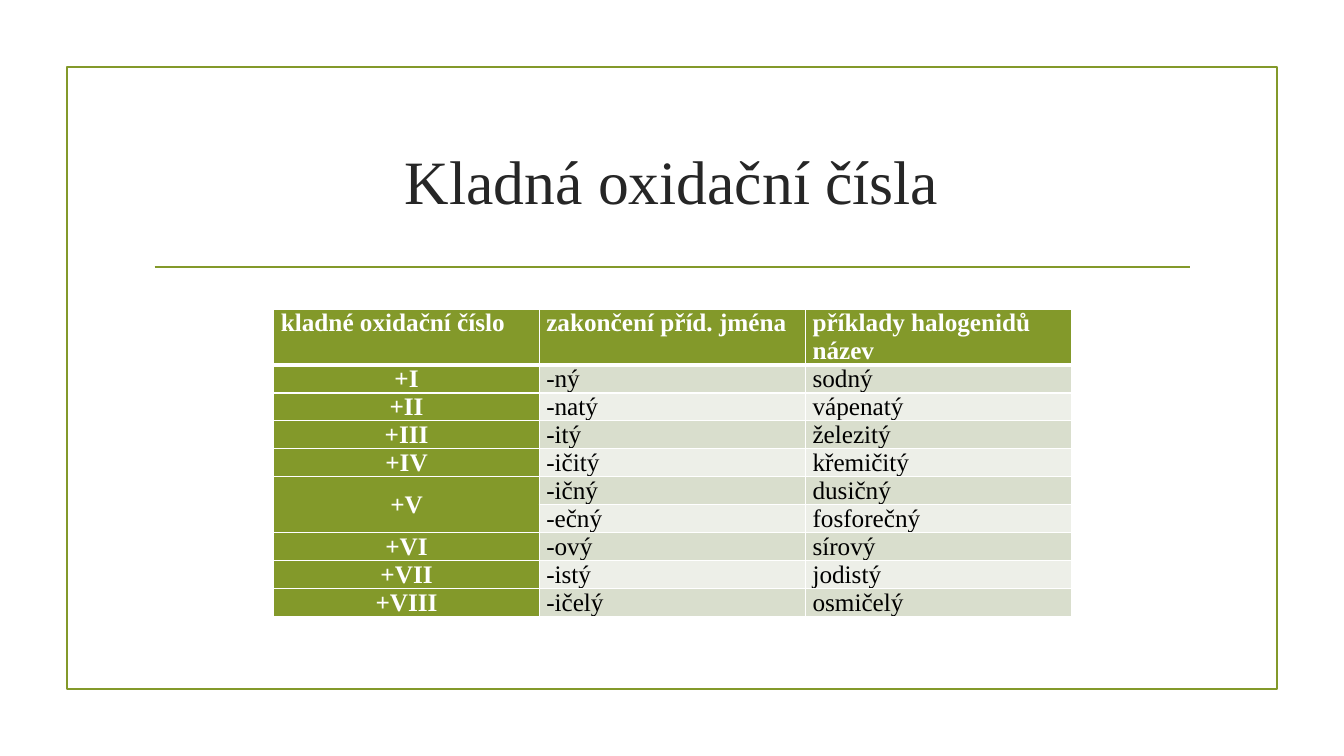
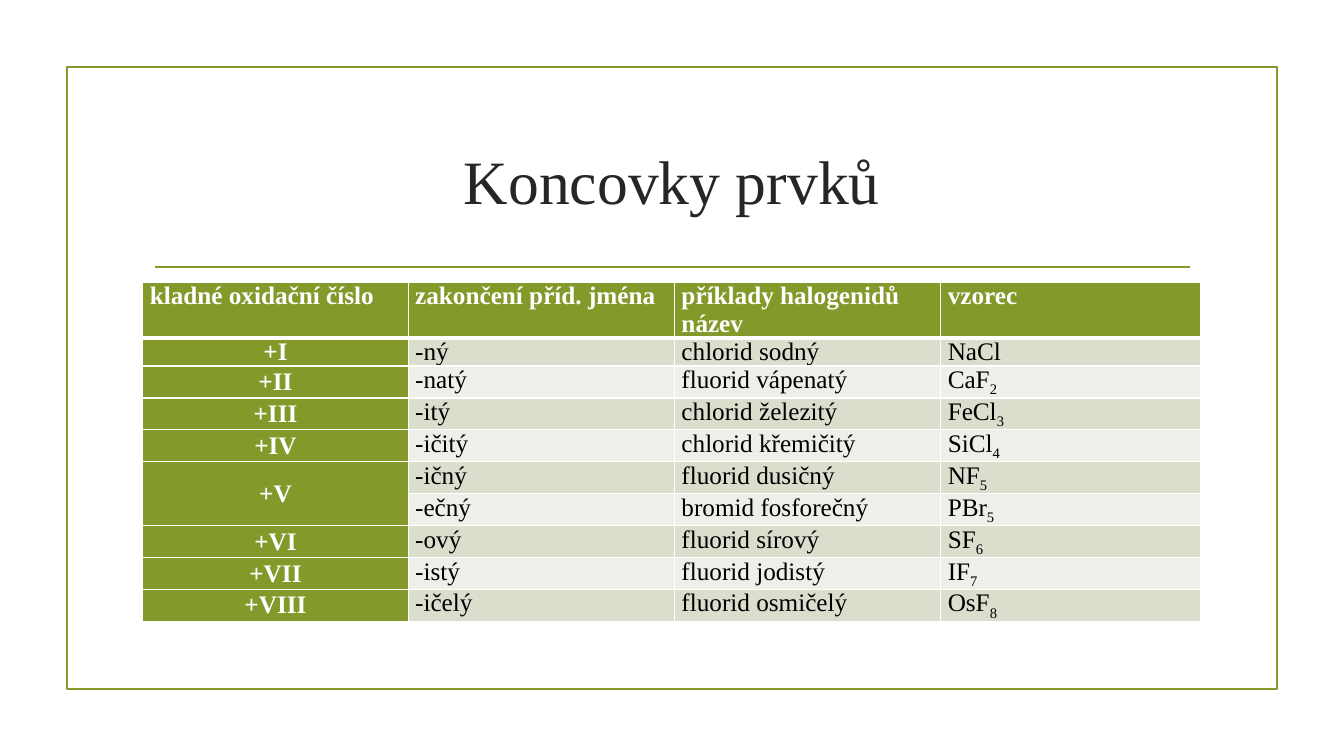
import itertools
from dataclasses import dataclass

import lxml.etree
import pptx
import pptx.dml.color
import pptx.enum.shapes
import pptx.enum.text
import pptx.oxml.ns
import pptx.util


@dataclass(frozen=True)
class Theme:
    font: str = "Times New Roman"
    green: str = "83992A"
    title: str = "262626"
    text: str = "000000"
    white: str = "FFFFFF"
    bands: tuple = ("D9DECD", "EDEFE8")
    title_size: float = 44
    table_size: float = 18
    line: float = 1.25
    border: float = 1
    header_border: float = 3


# The grid has 160 columns and 90 rows of square units
COLS, ROWS = 160, 90
UNIT = pptx.util.Inches(13.33) / COLS
TABLE_COLS = (31.6, 31.7, 31.7, 30.9)
HEADER_ROW, BODY_ROW = 6.6, 3.3

HEADERS = ("kladné oxidační číslo", "zakončení příd. jména",
           "příklady halogenidů\nnázev", "vzorec")
# Number, adjective ending, adjective, anion, formula
OXIDATION = (
    ("+I", "-ný", "sodný", "chlorid", "NaCl"),
    ("+II", "-natý", "vápenatý", "fluorid", "CaF2"),
    ("+III", "-itý", "železitý", "chlorid", "FeCl3"),
    ("+IV", "-ičitý", "křemičitý", "chlorid", "SiCl4"),
    ("+V", "-ičný", "dusičný", "fluorid", "NF5"),
    ("", "-ečný", "fosforečný", "bromid", "PBr5"),
    ("+VI", "-ový", "sírový", "fluorid", "SF6"),
    ("+VII", "-istý", "jodistý", "fluorid", "IF7"),
    ("+VIII", "-ičelý", "osmičelý", "fluorid", "OsF8"),
)


def grid(units):
    return pptx.util.Emu(round(units * UNIT))


def rgb(color):
    return pptx.dml.color.RGBColor.from_string(color)


class Deck:
    def __init__(self, theme):
        self.theme = theme
        self.prs = pptx.Presentation()
        self.prs.slide_width, self.prs.slide_height = grid(COLS), grid(ROWS)
        self.slide = None

    def new_slide(self, title):
        self.slide = self.prs.slides.add_slide(self.prs.slide_layouts[5])
        self.frame(8, 8, 144, 74)
        self.rule(18.4, 141.7, 31.8)
        self.title(title, 17, 12.8, 126, 17.2)

    def outline(self, line):
        line.color.rgb = rgb(self.theme.green)
        line.width = pptx.util.Pt(self.theme.line)

    def frame(self, *box):
        sp = self.slide.shapes.add_shape(
            pptx.enum.shapes.MSO_SHAPE.RECTANGLE, *map(grid, box))
        sp.shadow.inherit = False
        sp.fill.background()
        self.outline(sp.line)

    def rule(self, left, right, y):
        line = self.slide.shapes.add_connector(
            pptx.enum.shapes.MSO_CONNECTOR.STRAIGHT,
            grid(left), grid(y), grid(right), grid(y))
        self.outline(line.line)
        lxml.etree.SubElement(line._element.spPr,
                              pptx.oxml.ns.qn("a:effectLst"))

    def run(self, p, text, size, color, bold=False):
        r = p.add_run()
        r.text = text
        r.font.name, r.font.size = self.theme.font, pptx.util.Pt(size)
        r.font.bold, r.font.color.rgb = bold, rgb(color)
        return r

    def title(self, text, *box):
        sp = self.slide.shapes.title
        sp.left, sp.top, sp.width, sp.height = map(grid, box)
        tf = sp.text_frame
        tf.vertical_anchor = pptx.enum.text.MSO_ANCHOR.MIDDLE
        p = tf.paragraphs[0]
        p.alignment = pptx.enum.text.PP_ALIGN.CENTER
        self.run(p, text, self.theme.title_size, self.theme.title)

    def borders(self, cell, bottom):
        tc_pr = cell._tc.get_or_add_tcPr()
        for side in "LRTB":
            width = bottom if side == "B" else self.theme.border
            ln = lxml.etree.SubElement(tc_pr, pptx.oxml.ns.qn(f"a:ln{side}"),
                                       w=str(pptx.util.Pt(width)))
            fill = lxml.etree.SubElement(ln, pptx.oxml.ns.qn("a:solidFill"))
            lxml.etree.SubElement(fill, pptx.oxml.ns.qn("a:srgbClr"),
                                  val=self.theme.white)

    def cell(self, cell, text, row, col):
        th = self.theme
        strong = row == 0 or col == 0
        cell.margin_left = cell.margin_right = pptx.util.Inches(0.07)
        cell.margin_top = cell.margin_bottom = 0
        # Borders come before the fill in the cell properties
        self.borders(cell, th.border if row else th.header_border)
        cell.fill.solid()
        cell.fill.fore_color.rgb = rgb(
            th.green if strong else th.bands[(row - 1) % 2])
        tf = cell.text_frame
        for i, line in enumerate(text.split("\n")):
            p = tf.add_paragraph() if i else tf.paragraphs[0]
            if row and col == 0:
                p.alignment = pptx.enum.text.PP_ALIGN.CENTER
                cell.vertical_anchor = pptx.enum.text.MSO_ANCHOR.MIDDLE
            # Digits in formulas are subscripts
            for digit, chars in itertools.groupby(line, str.isdigit):
                r = self.run(p, "".join(chars), th.table_size,
                             th.white if strong else th.text, strong)
                if digit:
                    r._r.get_or_add_rPr().set("baseline", "-25000")

    def table(self, left, top, rows):
        widths = TABLE_COLS[:len(rows[0])]
        heights = [HEADER_ROW] + [BODY_ROW] * (len(rows) - 1)
        table = self.slide.shapes.add_table(
            len(rows), len(widths), grid(left), grid(top),
            grid(sum(widths)), grid(sum(heights))).table
        for column, width in zip(table.columns, widths):
            column.width = grid(width)
        for i, values in enumerate(rows):
            table.rows[i].height = grid(heights[i])
            for j, text in enumerate(values):
                self.cell(table.cell(i, j), text, i, j)
            # A row without a number joins the row above
            if not values[0]:
                table.cell(i - 1, 0).merge(table.cell(i, 0))


def main():
    deck = Deck(Theme())

    # Adjective endings
    deck.new_slide("Kladná oxidační čísla")
    deck.table(32.6, 36.8, [HEADERS[:3]] + [row[:3] for row in OXIDATION])

    # Halide names and formulas
    deck.new_slide("Koncovky prvků")
    deck.table(17, 33.6, [HEADERS] + [
        (number, ending, f"{anion} {adjective}", formula)
        for number, ending, adjective, anion, formula in OXIDATION])

    deck.prs.save("out.pptx")


if __name__ == "__main__":
    main()
